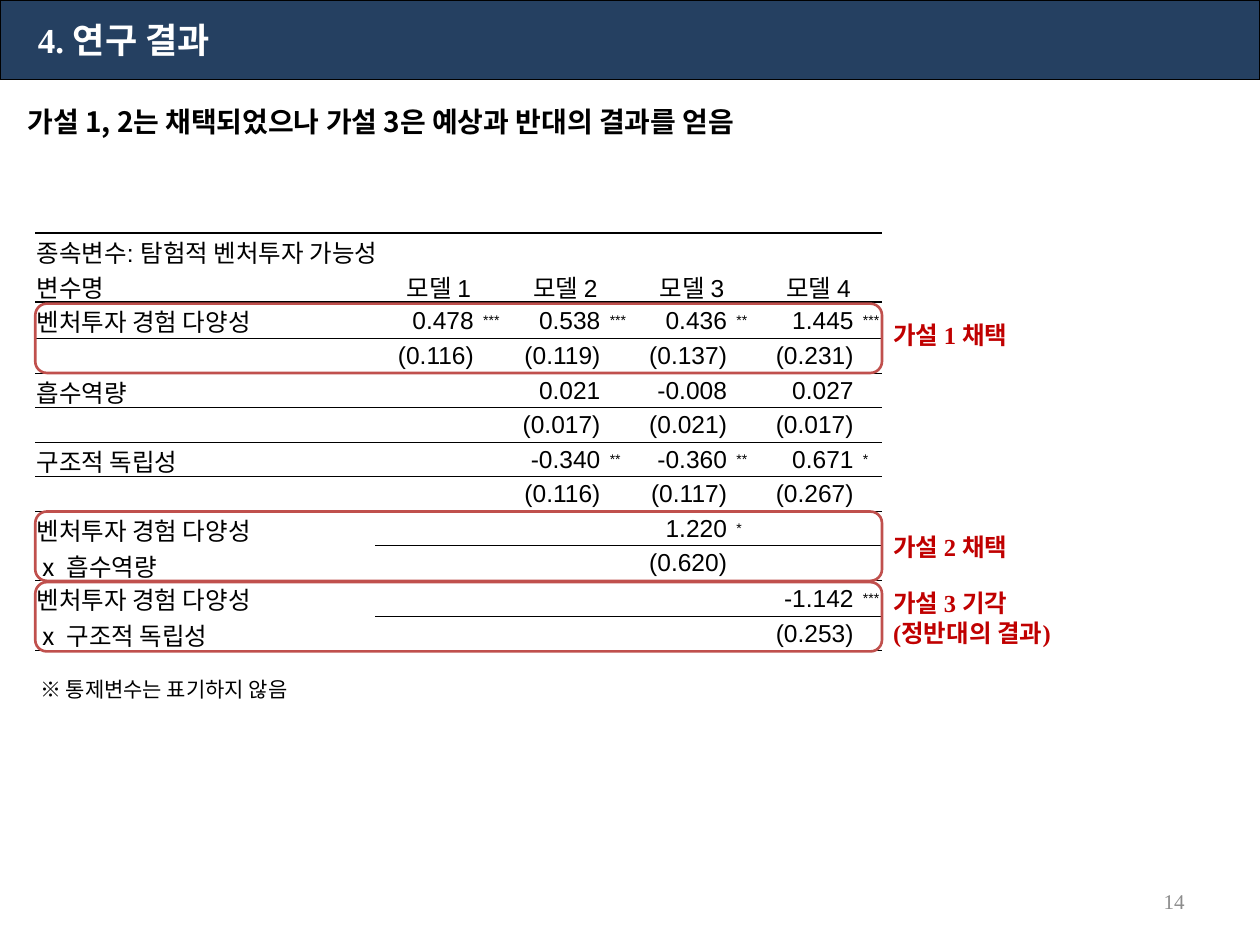
from lxml.etree import SubElement, Element
from pptx import Presentation
from pptx.dml.color import RGBColor
from pptx.enum.shapes import MSO_SHAPE
from pptx.enum.text import MSO_ANCHOR, PP_ALIGN
from pptx.oxml.ns import qn
from pptx.util import Inches, Pt

SERIF, SANS, KOREAN = "Times New Roman", "Arial", "Noto Sans CJK KR"
BLACK, RED = "000000", "C00000"
NO_GRID_STYLE = "{2D5ABB26-0587-4C30-8999-92F81FD0307C}"
LEFT, TOP, WIDTH, HEIGHT = 0.28, 1.85, 6.72, 3.32
LABEL_W, STARS_W = 2.7, 0.16
TALL_ROWS, TALL_H = (2, 10), 0.29
MODELS = ["모델 1", "모델 2", "모델 3", "모델 4"]

# label, then {model: (coefficient, stars, standard error)}
VARIABLES = [
    ("벤처투자 경험 다양성", {
        0: ("0.478", "***", "(0.116)"), 1: ("0.538", "***", "(0.119)"),
        2: ("0.436", "**", "(0.137)"), 3: ("1.445", "***", "(0.231)")}),
    ("흡수역량", {
        1: ("0.021", "", "(0.017)"), 2: ("-0.008", "", "(0.021)"),
        3: ("0.027", "", "(0.017)")}),
    ("구조적 독립성", {
        1: ("-0.340", "**", "(0.116)"), 2: ("-0.360", "**", "(0.117)"),
        3: ("0.671", "*", "(0.267)")}),
    ("벤처투자 경험 다양성 \nⅹ 흡수역량", {2: ("1.220", "*", "(0.620)")}),
    ("벤처투자 경험 다양성 \nⅹ 구조적 독립성", {3: ("-1.142", "***", "(0.253)")}),
]


def rgb(color):
    return RGBColor.from_string(color)


def write(tf, text, size, font, color=BLACK, bold=False, align=PP_ALIGN.LEFT, after=0):
    p = tf.paragraphs[0]
    for name, value in {"alignment": align, "space_after": Pt(after)}.items():
        setattr(p, name, value)
    for i, line in enumerate(text.split("\n")):
        if i:
            p.add_line_break()
        r = p.add_run()
        r.text = line
        for name, value in {"size": Pt(size), "name": font, "bold": bold}.items():
            setattr(r.font, name, value)
        r.font.color.rgb = rgb(color)
        SubElement(r.font._element, qn("a:ea"), typeface=KOREAN)


def add_text(s, box, text, size, font=SERIF, anchor=MSO_ANCHOR.TOP, **style):
    tf = s.shapes.add_textbox(*map(Inches, box)).text_frame
    tf.word_wrap = True
    tf.vertical_anchor = anchor
    write(tf, text, size, font, **style)


def add_box(s, kind, box, line, width, fill=None):
    sp = s.shapes.add_shape(kind, *map(Inches, box))
    sp.shadow.inherit = False
    if fill:
        sp.fill.solid()
        sp.fill.fore_color.rgb = rgb(fill)
    else:
        sp.fill.background()
    sp.line.color.rgb = rgb(line)
    sp.line.width = Pt(width)
    return sp


def add_border(cell, tag, width):
    tc_pr = cell._tc.get_or_add_tcPr()
    ln = Element(qn(tag), w=str(Pt(width)))
    SubElement(SubElement(ln, qn("a:solidFill")), qn("a:srgbClr"), val=BLACK)
    tc_pr.insert(len(tc_pr) - 1, ln)  # lines go before the fill


def format_cell(cell):
    margins = {"margin_left": 0.01, "margin_right": 0.01, "margin_top": 0.01, "margin_bottom": 0}
    for name, value in margins.items():
        setattr(cell, name, Inches(value))
    cell.vertical_anchor = MSO_ANCHOR.MIDDLE
    cell.fill.background()
    # keeps empty cells from stretching their row
    SubElement(cell.text_frame.paragraphs[0]._p, qn("a:endParaRPr"), sz="800")


def fill_cell(cell, text, size=14, align=PP_ALIGN.LEFT):
    write(cell.text_frame, text, size, SANS, align=align)


def add_results_table(s):
    n_rows, n_cols = 2 + 2 * len(VARIABLES), 1 + 2 * len(MODELS)
    frame = s.shapes.add_table(n_rows, n_cols, *map(Inches, (LEFT, TOP, WIDTH, HEIGHT)))
    table = frame.table
    table.first_row = table.horz_banding = False
    table._tbl.tblPr.find(qn("a:tableStyleId")).text = NO_GRID_STYLE

    value_w = (WIDTH - LABEL_W) / len(MODELS) - STARS_W
    for col, width in enumerate([LABEL_W] + [value_w, STARS_W] * len(MODELS)):
        table.columns[col].width = Inches(width)
    row_h = (HEIGHT - len(TALL_ROWS) * TALL_H) / (n_rows - len(TALL_ROWS))
    for i, row in enumerate(table.rows):
        row.height = Inches(TALL_H if i in TALL_ROWS else row_h)
        for cell in row.cells:
            format_cell(cell)
            if i % 2 == 0:
                add_border(cell, "a:lnT", 1 if i in (0, 2) else 0.5)
            elif i == 1 or i == n_rows - 1:
                add_border(cell, "a:lnB", 1 if i == 1 else 0.5)

    table.cell(0, 0).merge(table.cell(0, n_cols - 1))
    fill_cell(table.cell(0, 0), "종속변수: 탐험적 벤처투자 가능성")
    fill_cell(table.cell(1, 0), "변수명")
    for m, model in enumerate(MODELS):
        table.cell(1, 1 + 2 * m).merge(table.cell(1, 2 + 2 * m))
        fill_cell(table.cell(1, 1 + 2 * m), model, align=PP_ALIGN.CENTER)

    for i, (label, results) in enumerate(VARIABLES):
        row = 2 + 2 * i
        name_cell = table.cell(row, 0)
        if "\n" in label:
            name_cell.merge(table.cell(row + 1, 0))
            add_border(name_cell, "a:lnB", 0.5)
        fill_cell(name_cell, label)
        for m, (value, stars, error) in results.items():
            col = 1 + 2 * m
            fill_cell(table.cell(row, col), value + " ", align=PP_ALIGN.RIGHT)
            fill_cell(table.cell(row + 1, col), error + " ", align=PP_ALIGN.RIGHT)
            if stars:
                fill_cell(table.cell(row, col + 1), stars, size=8)

    # the end mark must follow the runs
    for end in list(table._tbl.iter(qn("a:endParaRPr"))):
        end.getparent().append(end)


def add_title_bar(s):
    bar = add_box(s, MSO_SHAPE.RECTANGLE, (0, 0, 10, 0.63), BLACK, 0.75, "254061")
    tf = bar.text_frame
    tf.margin_left = Inches(0.3)
    tf.vertical_anchor = MSO_ANCHOR.MIDDLE
    write(tf, "4. 연구 결과", 20, SERIF, color="FFFFFF", bold=True)


def main():
    prs = Presentation()
    prs.slide_width, prs.slide_height = Inches(10), Inches(7.5)
    s = prs.slides.add_slide(prs.slide_layouts[6])

    add_text(s, (7.17, 6.95, 2.33, 0.4), "14", 12, anchor=MSO_ANCHOR.MIDDLE,
             color="8C8C8C", align=PP_ALIGN.RIGHT)
    add_title_bar(s)
    add_text(s, (0.12, 0.78, 9.76, 0.37), "가설 1, 2는 채택되었으나 가설 3은 예상과 반대의 결과를 얻음",
             16, KOREAN, bold=True, after=6)
    add_results_table(s)
    add_text(s, (0.22, 5.32, 2.65, 0.31), "※ 통제변수는 표기하지 않음", 12, after=6)

    for top in (2.41, 4.06, 4.62):
        add_box(s, MSO_SHAPE.ROUNDED_RECTANGLE, (LEFT, top, WIDTH, 0.55), "C0504D", 1.5)
    verdicts = [(2.49, 0.34, "가설 1 채택"), (4.17, 0.34, "가설 2 채택"),
                (4.62, 0.57, "가설 3 기각\n(정반대의 결과)")]
    for top, height, text in verdicts:
        add_text(s, (6.99, top, 2.89, height), text, 14, color=RED, bold=True, after=6)

    prs.save("out.pptx")


if __name__ == "__main__":
    main()
